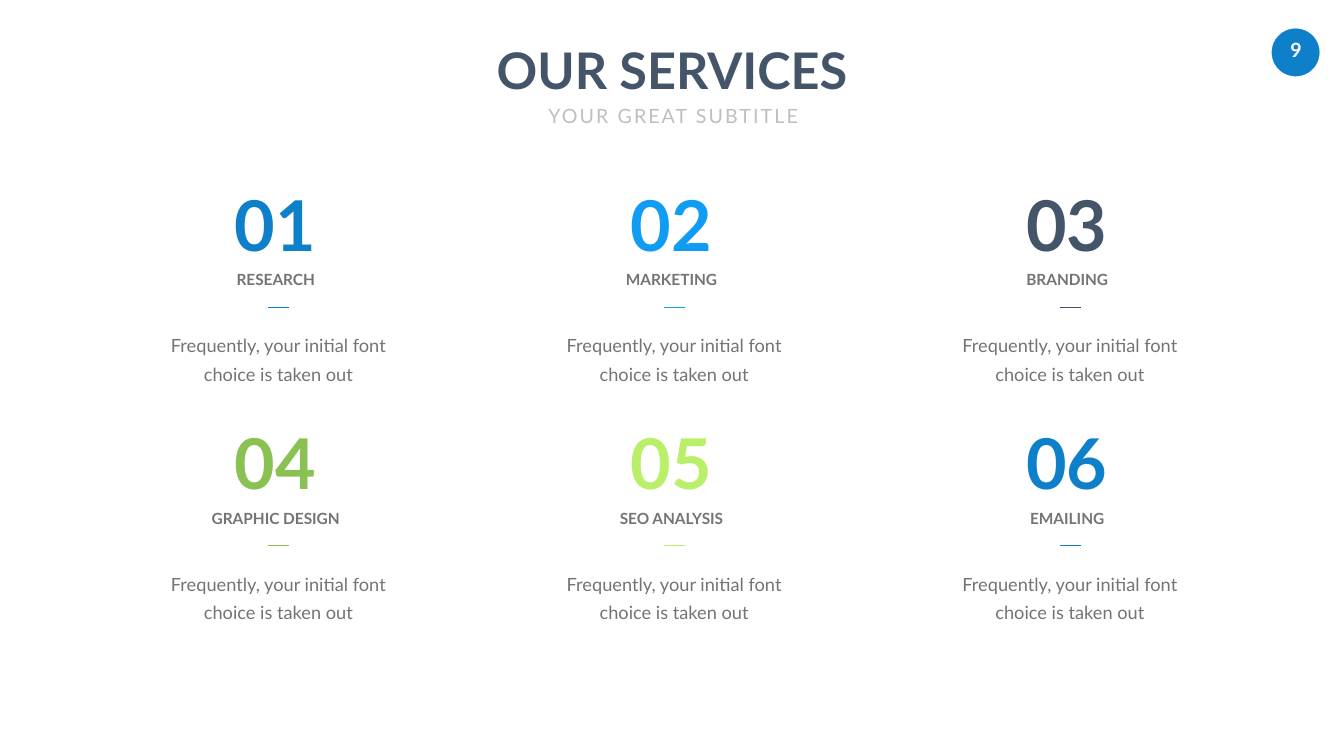
from dataclasses import dataclass

from lxml import etree
from pptx import Presentation
from pptx.dml.color import RGBColor
from pptx.enum.shapes import MSO_CONNECTOR, MSO_SHAPE
from pptx.enum.text import MSO_AUTO_SIZE, PP_ALIGN
from pptx.oxml.ns import qn
from pptx.util import Inches, Pt

CENTER = PP_ALIGN.CENTER
GROW = MSO_AUTO_SIZE.SHAPE_TO_FIT_TEXT
ELLIPSE = MSO_SHAPE.OVAL
STRAIGHT = MSO_CONNECTOR.STRAIGHT


@dataclass(frozen=True)
class Theme:
    font: str = "Lato"
    blue: str = "0E80C9"
    sky: str = "119CF4"
    navy: str = "445469"
    green: str = "8AC153"
    lime: str = "BAEF69"
    gray: str = "737572"
    silver: str = "BFBFBF"
    white: str = "FFFFFF"
    title_size: int = 72
    subtitle_size: int = 28
    page_size: int = 28
    number_size: int = 100
    label_size: int = 22
    body_size: int = 26
    hairline: float = 0.5


class SlideBuilder:
    def __init__(self, slide, theme):
        self.slide = slide
        self.theme = theme

    def text(self, content, left, top, width, height, size, color, bold=False,
             wrap=False, inset=(0.1, 0.05), line_spacing=None, tracking=None):
        shape = self.slide.shapes.add_textbox(
            Inches(left), Inches(top), Inches(width), Inches(height))
        frame = shape.text_frame
        frame.text = content
        frame.word_wrap = wrap
        frame.auto_size = GROW
        frame.margin_left = frame.margin_right = Inches(inset[0])
        frame.margin_top = frame.margin_bottom = Inches(inset[1])
        paragraph = frame.paragraphs[0]
        paragraph.alignment = CENTER
        paragraph.line_spacing = line_spacing
        run = paragraph.runs[0]
        run.font.name = self.theme.font
        run.font.size = Pt(size)
        run.font.bold = bold
        run.font.color.rgb = RGBColor.from_string(color)
        if tracking:
            run._r.get_or_add_rPr().set("spc", str(tracking * 100))

    def circle(self, left, top, diameter, color):
        shape = self.slide.shapes.add_shape(
            ELLIPSE, Inches(left), Inches(top), Inches(diameter), Inches(diameter))
        shape.shadow.inherit = False
        shape.fill.solid()
        shape.fill.fore_color.rgb = RGBColor.from_string(color)
        shape.line.color.rgb = RGBColor.from_string(color)
        shape.line.width = Pt(self.theme.hairline)

    def rule(self, left, top, length, color):
        connector = self.slide.shapes.add_connector(
            STRAIGHT, Inches(left), Inches(top), Inches(left + length), Inches(top))
        connector.line.color.rgb = RGBColor.from_string(color)
        connector.line.width = Pt(self.theme.hairline)
        etree.SubElement(connector._element.spPr, qn("a:effectLst"))

    def service(self, center, top, number, label, label_width, color):
        theme = self.theme
        self.text("Frequently, your initial font choice is taken out",
                  center - 2.46, top + 2.84, 5.03, 1.36, theme.body_size, theme.gray,
                  wrap=True, inset=(0.24, 0.12), line_spacing=Pt(40.4))
        self.text(number, center - 0.92, top, 1.83, 1.78,
                  theme.number_size, color, bold=True)
        self.text(label, center - label_width / 2, top + 1.76, label_width, 0.48,
                  theme.label_size, theme.gray, bold=True, line_spacing=Pt(26.8))
        self.rule(center - 0.15, top + 2.54, 0.42, color)


def main():
    presentation = Presentation()
    presentation.slide_width = Inches(26.66)
    presentation.slide_height = Inches(15)
    slide = presentation.slides.add_slide(presentation.slide_layouts[6])
    theme = Theme()
    builder = SlideBuilder(slide, theme)

    builder.circle(25.23, 0.57, 0.94, theme.blue)
    builder.text("9", 25.27, 0.66, 0.88, 0.67, theme.page_size, theme.white,
                 bold=True, inset=(0.2, 0.1))

    services = [
        ("RESEARCH", 1.81, theme.blue),
        ("MARKETING", 2.06, theme.sky),
        ("BRANDING", 1.87, theme.navy),
        ("GRAPHIC DESIGN", 2.83, theme.green),
        ("SEO ANALYSIS", 2.38, theme.lime),
        ("EMAILING", 1.71, theme.blue),
    ]
    columns = 3
    first_center, column_step = 5.47, 7.85
    first_top, row_step = 3.55, 4.73
    for index, (label, label_width, color) in enumerate(services):
        row, column = divmod(index, columns)
        builder.service(first_center + column * column_step,
                        first_top + row * row_step,
                        f"{index + 1:02d}", label, label_width, color)

    builder.text("OUR SERVICES", 9.69, 0.72, 7.28, 1.31,
                 theme.title_size, theme.navy, bold=True)
    builder.text("YOUR GREAT SUBTITLE", 10.56, 1.85, 5.59, 0.81,
                 theme.subtitle_size, theme.silver, inset=(0.24, 0.12),
                 line_spacing=1.2, tracking=3)

    presentation.save("out.pptx")


if __name__ == "__main__":
    main()
